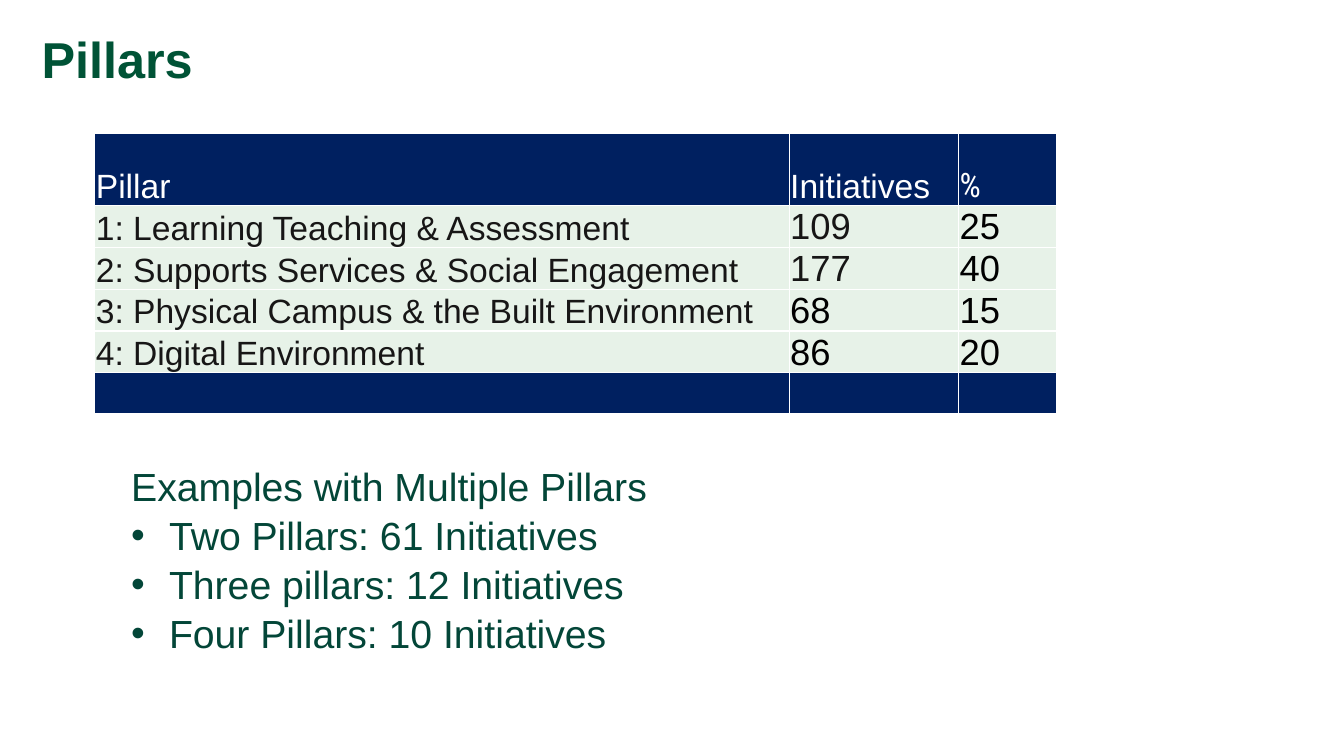
from lxml import etree
from pptx import Presentation
from pptx.dml.color import RGBColor
from pptx.enum.text import MSO_ANCHOR, MSO_AUTO_SIZE, PP_ALIGN
from pptx.oxml.ns import qn
from pptx.util import Pt

BOTTOM, MIDDLE, TOP = MSO_ANCHOR.BOTTOM, MSO_ANCHOR.MIDDLE, MSO_ANCHOR.TOP
NO_FIT = MSO_AUTO_SIZE.NONE
LEFT = PP_ALIGN.LEFT

NAVY, MINT, WHITE = "002060", "E7F2E8", "FFFFFF"
BLACK, INK = "000000", "171616"
TITLE_GREEN, LIST_GREEN = "005336", "034638"

COLUMN_WIDTHS = (496, 121, 70)
HEADER_HEIGHT, ROW_HEIGHT = 51.5, 28
HEADINGS = ("Pillar", "Initiatives", "%")
PILLARS = (
    ("1: Learning Teaching & Assessment", "109", "25"),
    ("2: Supports Services & Social Engagement", "177", "40"),
    ("3: Physical Campus & the Built Environment", "68", "15"),
    ("4: Digital Environment", "86", "20"),
)
EXAMPLES = (
    "Examples with Multiple Pillars",
    "Two Pillars: 61 Initiatives",
    "Three pillars: 12 Initiatives",
    "Four Pillars: 10 Initiatives",
)


def colour(value):
    return RGBColor.from_string(value)


def style(para, size, ink, bold=False, name="Arial"):
    for span in para.runs:
        span.font.name = name
        span.font.size = Pt(size)
        span.font.bold = bold
        span.font.color.rgb = colour(ink)


def place(shape, box):
    shape.left, shape.top, shape.width, shape.height = map(Pt, box)


def set_bullet(para, character, indent):
    properties = para._p.get_or_add_pPr()
    properties.set("marL", str(Pt(indent)))
    properties.set("indent", str(-Pt(indent)))
    if character:
        etree.SubElement(properties, qn("a:buFont"), typeface="Arial")
        etree.SubElement(properties, qn("a:buChar"), char=character)
    else:
        etree.SubElement(properties, qn("a:buNone"))


# Title
def add_title(page, box):
    title = page.shapes.title
    place(title, box)
    frame = title.text_frame
    frame.text = "Pillars"
    frame.auto_size = NO_FIT
    frame.vertical_anchor = MIDDLE
    para = frame.paragraphs[0]
    para.alignment = LEFT
    para.line_spacing = 0.9
    style(para, 36, TITLE_GREEN, bold=True)


# Table of pillars
def fill_cell(cell, text, size, ink, name="Arial"):
    cell.vertical_anchor = BOTTOM
    cell.margin_left = cell.margin_right = cell.margin_top = Pt(0.75)
    cell.margin_bottom = 0
    cell.text = text
    style(cell.text_frame.paragraphs[0], size, ink, name=name)


def add_pillar_table(page, left, top):
    row_count = len(PILLARS) + 2
    height = HEADER_HEIGHT + ROW_HEIGHT * (row_count - 1)
    frame = page.shapes.add_table(
        row_count, len(HEADINGS), Pt(left), Pt(top), Pt(sum(COLUMN_WIDTHS)), Pt(height))
    table = frame.table
    for column, width in zip(table.columns, COLUMN_WIDTHS):
        column.width = Pt(width)
    for index, row in enumerate(table.rows):
        row.height = Pt(ROW_HEIGHT if index else HEADER_HEIGHT)
        for cell in row.cells:
            cell.fill.solid()
            cell.fill.fore_color.rgb = colour(NAVY if index in (0, row_count - 1) else MINT)

    for column, heading in enumerate(HEADINGS):
        name = "Roboto Condensed" if heading == "%" else "Arial"
        fill_cell(table.cell(0, column), heading, 24, WHITE, name)
    for row, (pillar, initiatives, percent) in enumerate(PILLARS, start=1):
        fill_cell(table.cell(row, 0), pillar, 24, INK)
        fill_cell(table.cell(row, 1), initiatives, 26, INK if row <= 2 else BLACK)
        fill_cell(table.cell(row, 2), percent, 26, BLACK)


# List of examples
def add_examples(page, box):
    body = page.placeholders[1]
    place(body, box)
    frame = body.text_frame
    frame.text = "\n".join(EXAMPLES)
    frame.auto_size = NO_FIT
    frame.vertical_anchor = TOP
    for index, para in enumerate(frame.paragraphs):
        para.space_before = Pt(0)
        para.line_spacing = 1.04
        set_bullet(para, "•" if index else None, 27 if index else 0)
        style(para, 28, LIST_GREEN)


def main():
    deck = Presentation()
    deck.slide_width, deck.slide_height = Pt(960), Pt(540)
    page = deck.slides.add_slide(deck.slide_layouts[1])
    add_title(page, (22.5, 17, 828, 55.5))
    add_pillar_table(page, 67.75, 95.5)
    add_examples(page, (86.5, 325.5, 538, 143.5))
    deck.save("out.pptx")


if __name__ == "__main__":
    main()
